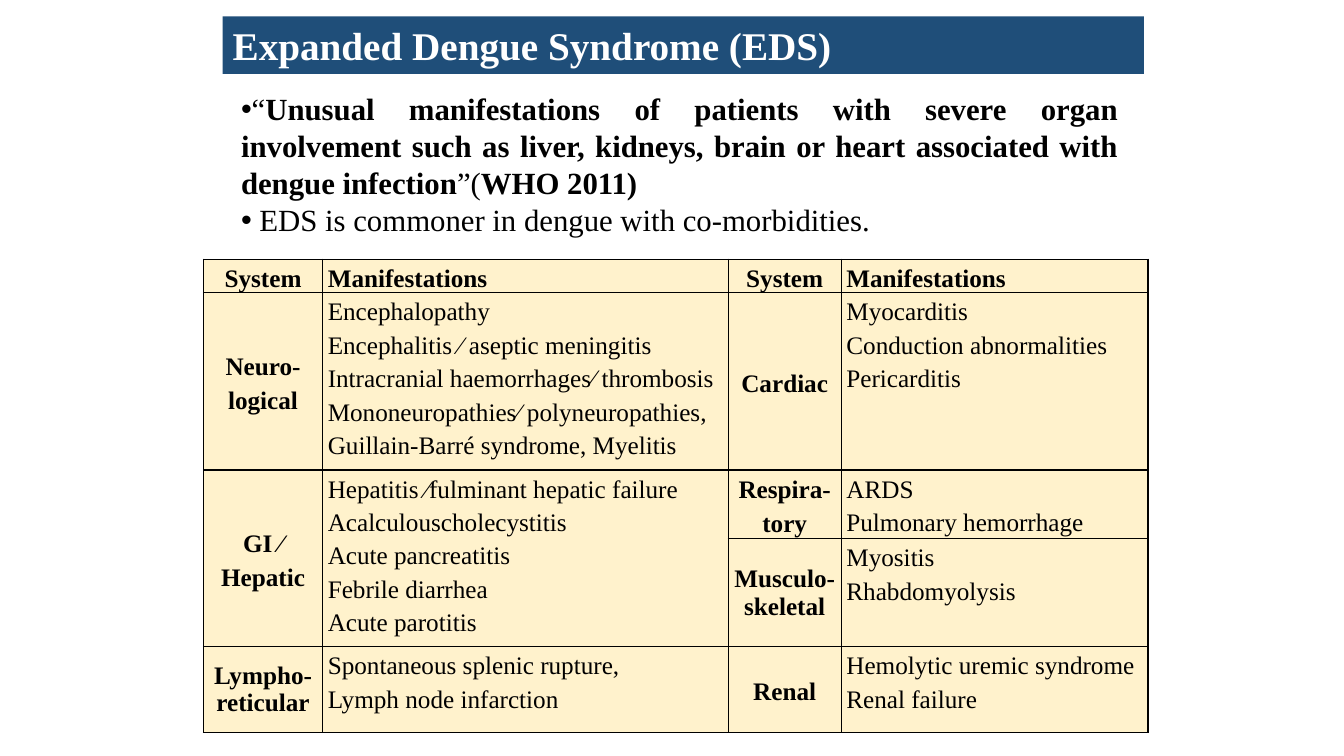
"""Build a slide on expanded dengue syndrome with a table of manifestations by system."""
from lxml.etree import SubElement, fromstring
from pptx import Presentation
from pptx.dml.color import RGBColor
from pptx.enum.text import MSO_ANCHOR, MSO_AUTO_SIZE, PP_ALIGN
from pptx.oxml.ns import nsdecls, qn
from pptx.util import Cm, Pt

NAVY = RGBColor(0x1F, 0x4E, 0x79)
CREAM = RGBColor(0xFF, 0xF2, 0xCC)
BLACK = RGBColor(0, 0, 0)
WHITE = RGBColor(0xFF, 0xFF, 0xFF)
FONT = "Times New Roman"


def add_run(p, text, size=18, bold=False, color=BLACK):
    r = p.add_run()
    r.text = text
    r.font.name = FONT
    r.font.size = Pt(size)
    r.font.bold = bold
    r.font.color.rgb = color


prs = Presentation()
prs.slide_width, prs.slide_height = Cm(33.87), Cm(19.05)
s = prs.slides.add_slide(prs.slide_layouts[1])

title = s.shapes.title
title.left, title.top, title.width, title.height = Cm(5.61), Cm(0.41), Cm(23.22), Cm(1.45)
title.fill.solid()
title.fill.fore_color.rgb = NAVY
tf = title.text_frame
tf.auto_size = MSO_AUTO_SIZE.NONE
tf.vertical_anchor = MSO_ANCHOR.MIDDLE
tf.paragraphs[0].alignment = PP_ALIGN.JUSTIFY
add_run(tf.paragraphs[0], "Expanded Dengue Syndrome (EDS)", size=28, bold=True, color=WHITE)

body = s.placeholders[1]
body.left, body.top, body.width, body.height = Cm(5.82), Cm(2.13), Cm(22.61), Cm(4.01)
tf = body.text_frame
tf.auto_size = MSO_AUTO_SIZE.NONE
tf.vertical_anchor = MSO_ANCHOR.MIDDLE
bullets = [
    [
        ("“", False),
        ("Unusual manifestations of patients with severe organ involvement such as liver, "
         "kidneys, brain or heart associated with dengue infection", True),
        ("”(", False),
        ("WHO 2011)", True),
    ],
    [(" EDS is commoner in dengue with co-morbidities.", False)],
]
for i, runs in enumerate(bullets):
    p = tf.add_paragraph() if i else tf.paragraphs[0]
    p.alignment = PP_ALIGN.JUSTIFY
    p.space_before = Pt(0)
    pPr = p._p.get_or_add_pPr()
    pPr.set("marL", "0")
    pPr.set("indent", "0")
    SubElement(pPr, qn("a:buFont"), typeface="Arial")
    SubElement(pPr, qn("a:buChar"), char="•")
    for text, bold in runs:
        add_run(p, text, size=22, bold=bold)

rows = [
    (["System"], ["Manifestations"], ["System"], ["Manifestations"]),
    (
        ["Neuro-logical"],
        ["Encephalopathy", "Encephalitis ⁄ aseptic meningitis",
         "Intracranial haemorrhages⁄ thrombosis", "Mononeuropathies⁄ polyneuropathies,",
         "Guillain-Barré syndrome, Myelitis"],
        ["Cardiac"],
        ["Myocarditis", "Conduction abnormalities", "Pericarditis"],
    ),
    (
        ["GI ⁄ Hepatic"],
        ["Hepatitis ⁄fulminant hepatic failure", "Acalculouscholecystitis",
         "Acute pancreatitis", "Febrile diarrhea", "Acute parotitis"],
        ["Respira-tory"],
        ["ARDS", "Pulmonary hemorrhage"],
    ),
    ([], [], ["Musculo-skeletal"], ["Myositis", "Rhabdomyolysis"]),
    (
        ["Lympho-reticular"],
        ["Spontaneous splenic rupture,", "Lymph node infarction"],
        ["Renal"],
        ["Hemolytic uremic syndrome", "Renal failure"],
    ),
]
col_widths = [3, 10.22, 2.85, 7.73]
row_heights = [0.84, 4.47, 1.73, 2.72, 2.16]
tight = ("Musculo-skeletal", "Lympho-reticular")

frame = s.shapes.add_table(len(rows), len(col_widths), Cm(5.13), Cm(6.53),
                           Cm(sum(col_widths)), Cm(sum(row_heights)))
table = frame.table
table.first_row = table.horz_banding = False
for col, width in zip(table.columns, col_widths):
    col.width = Cm(width)
for row, height in zip(table.rows, row_heights):
    row.height = Cm(height)
for c in (0, 1):
    table.cell(2, c).merge(table.cell(3, c))

for i, row in enumerate(rows):
    for j, lines in enumerate(row):
        cell = table.cell(i, j)
        is_system = j % 2 == 0
        cell.fill.solid()
        cell.fill.fore_color.rgb = CREAM
        cell.margin_left = cell.margin_right = Cm(0.13)
        cell.margin_top = cell.margin_bottom = Cm(0)
        cell.vertical_anchor = MSO_ANCHOR.MIDDLE if is_system else MSO_ANCHOR.TOP
        tcPr = cell._tc.get_or_add_tcPr()
        for k, side in enumerate(("lnL", "lnR", "lnT", "lnB")):
            tcPr.insert(k, fromstring(
                f'<a:{side} {nsdecls("a")} w="{Pt(1)}"><a:solidFill>'
                f'<a:srgbClr val="{BLACK}"/></a:solidFill></a:{side}>'))
        for n, line in enumerate(lines):
            tf = cell.text_frame
            p = tf.add_paragraph() if n else tf.paragraphs[0]
            if is_system:
                p.alignment = PP_ALIGN.CENTER
            else:
                p.alignment = PP_ALIGN.JUSTIFY if i in (1, 2, 3) else PP_ALIGN.LEFT
            p.line_spacing = 1.0 if line in tight else 1.2
            add_run(p, line, bold=is_system or i == 0)

prs.save("out.pptx")
